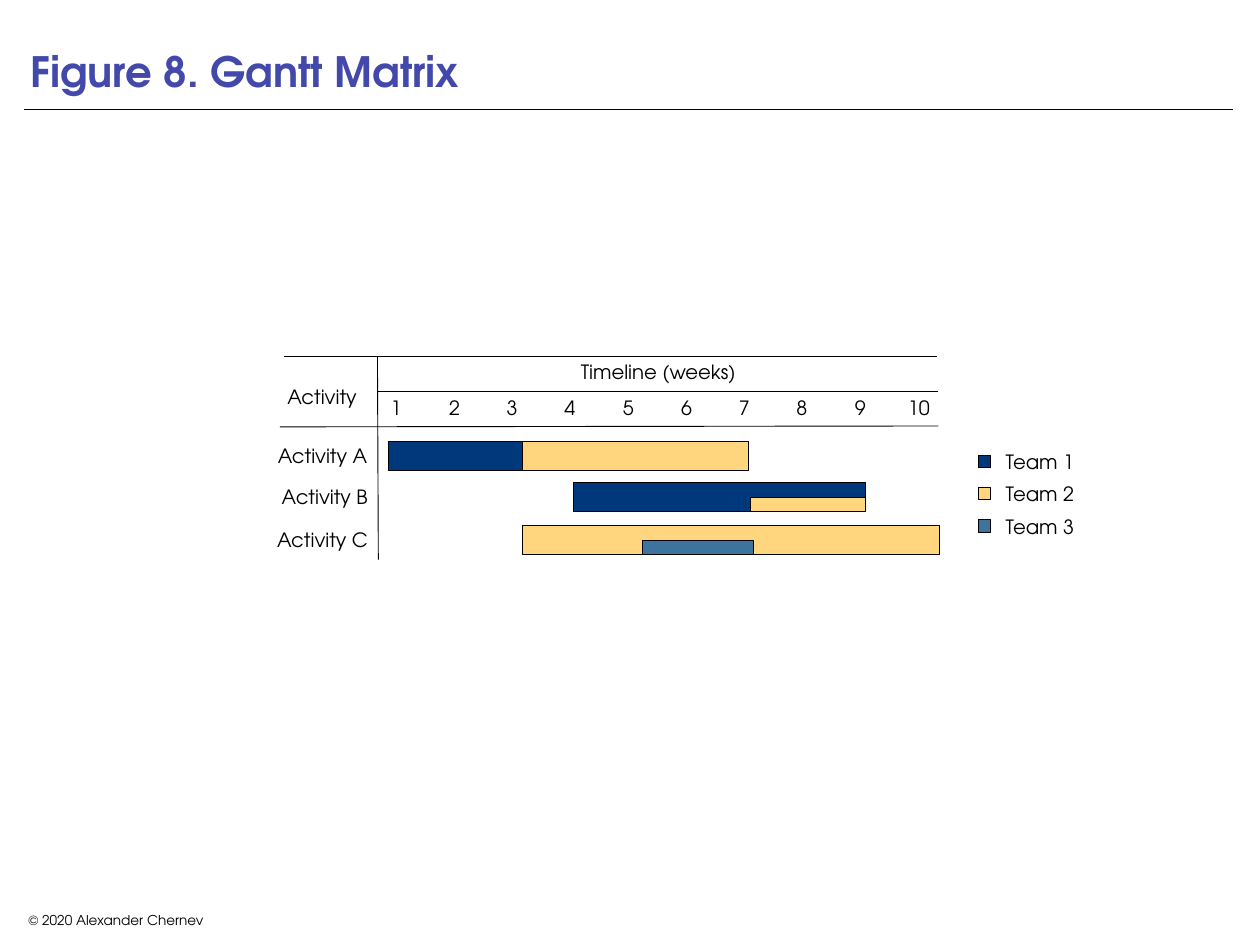
from dataclasses import dataclass
from lxml.etree import SubElement
from pptx import Presentation
from pptx.dml.color import RGBColor as Rgb
from pptx.enum.shapes import MSO_CONNECTOR as Link, MSO_SHAPE as Kind
from pptx.enum.text import MSO_ANCHOR as Anchor, MSO_AUTO_SIZE as Fit, PP_ALIGN as Align
from pptx.oxml.ns import qn
from pptx.util import Pt

# Content
TITLE = "Figure 8. Gantt Matrix"
CREDIT = "© 2020 Alexander Chernev"
WEEKS = range(1, 11)
TEAMS = ["Team 1", "Team 2", "Team 3"]
# Activity, label left, bars: (team, left, width, is half height)
TASKS = [
    ("Activity A", 303, [(0, 438, 162, False), (1, 590, 255, False)]),
    ("Activity B", 308, [(0, 647, 330, False), (1, 847, 130, True)]),
    ("Activity C", 303, [(1, 590, 470, False), (2, 725, 125, True)]),
]
# Rules: x1, y1, x2, y2, points
RULES = [
    (27, 124, 1392, 124, 0.5),
    (321, 403, 1058, 403, 0.75),
    (316, 482, 1059, 481, 0.75),
    (426, 442, 1059, 442, 0.75),
    (427, 632, 426, 402, 0.75),
]


@dataclass(frozen=True)
class Theme:
    font: str = "TeX Gyre Adventor"
    ink: str = "000000"
    title: str = "4349AA"
    teams: tuple = ("00397B", "FFD67E", "3D749D")
    head: int = 34
    body: int = 16
    small: int = 11
    edge: float = 0.75


THEME = Theme()
PX = 9144  # 100 px to the inch

deck = Presentation()
deck.slide_width, deck.slide_height = 1422 * PX, 1067 * PX
slide = deck.slides.add_slide(deck.slide_layouts[5])
shapes = slide.shapes


# Helpers
def style(box, text, size=THEME.body, color=THEME.ink, bold=False,
          align=Align.CENTER, anchor=Anchor.MIDDLE, inset=6, wrap=True):
    frame = box.text_frame
    frame.text = text
    frame.auto_size = Fit.NONE
    frame.word_wrap = wrap
    frame.vertical_anchor = anchor
    frame.margin_left = frame.margin_right = inset * PX
    frame.margin_top = frame.margin_bottom = inset * PX
    para = frame.paragraphs[0]
    para.alignment = align
    font = para.runs[0].font
    font.name, font.size, font.bold = THEME.font, Pt(size), bold
    font.color.rgb = Rgb.from_string(color)


def label(text, x, y, w, h, **look):
    style(shapes.add_textbox(x * PX, y * PX, w * PX, h * PX), text, **look)


def block(team, x, y, w, h):
    rect = shapes.add_shape(Kind.RECTANGLE, x * PX, y * PX, w * PX, h * PX)
    rect.shadow.inherit = False
    rect.fill.solid()
    rect.fill.fore_color.rgb = Rgb.from_string(THEME.teams[team])
    rect.line.color.rgb = Rgb.from_string(THEME.ink)
    rect.line.width = Pt(THEME.edge)


def rule(x1, y1, x2, y2, width):
    line = shapes.add_connector(Link.STRAIGHT, x1 * PX, y1 * PX, x2 * PX, y2 * PX)
    line.line.color.rgb = Rgb.from_string(THEME.ink)
    line.line.width = Pt(width)
    SubElement(line.element.spPr, qn("a:effectLst"))


# Title and credit
head = shapes.title
head.left, head.top, head.width, head.height = 27 * PX, 0, 1364 * PX, 115 * PX
style(head, TITLE, THEME.head, THEME.title, True, Align.LEFT, Anchor.BOTTOM, 7)
label(CREDIT, 25, 1023, 347, 32, size=THEME.small, align=Align.LEFT,
      anchor=Anchor.BOTTOM, inset=7)

# Table rules and headings
for ends in RULES:
    rule(*ends)
label("Activity", 310, 428, 107, 40)
label("Timeline (weeks)", 639, 400, 208, 40)
for i, week in enumerate(WEEKS):
    label(str(week), 427 + round(65.5 * i), 441, 40, 36, anchor=Anchor.TOP)

# Activities and bars
for i, (name, left, bars) in enumerate(TASKS):
    top = 498 + 95 * i // 2
    label(name, left, top - 3, 425 - left, 38)
    for team, x, width, half in bars:
        block(team, x, top + 17 * half, width, 16 if half else 33)

# Legend
for i, name in enumerate(TEAMS):
    top = 514 + 73 * i // 2
    block(i, 1104, top, 14, 14)
    label(name, 1129, top - 12, 90, 39, align=Align.LEFT, wrap=False)

deck.save("out.pptx")
